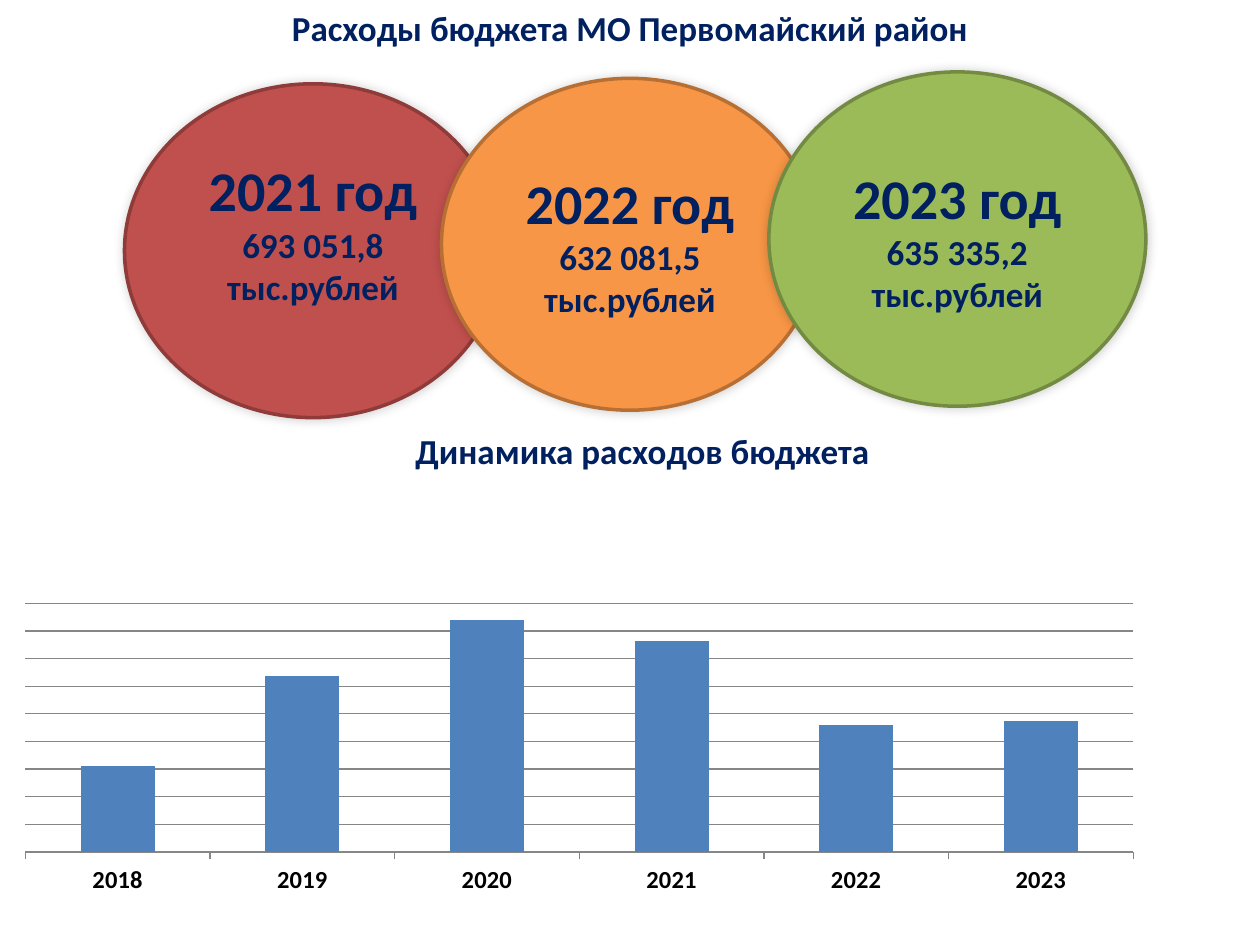
from lxml.etree import SubElement
from pptx import Presentation
from pptx.chart.data import CategoryChartData
from pptx.dml.color import RGBColor
from pptx.enum.chart import XL_CHART_TYPE, XL_TICK_LABEL_POSITION, XL_TICK_MARK
from pptx.enum.shapes import MSO_SHAPE
from pptx.enum.text import MSO_ANCHOR, MSO_AUTO_SIZE, PP_ALIGN
from pptx.oxml import parse_xml
from pptx.oxml.ns import nsdecls, qn
from pptx.util import Cm, Pt

NAVY = RGBColor(0x00, 0x20, 0x60)
BLACK = RGBColor(0x00, 0x00, 0x00)
GRAY = RGBColor(0x86, 0x86, 0x86)
BLUE = RGBColor(0x4F, 0x81, 0xBD)
RED, DARK_RED = RGBColor(0xC0, 0x50, 0x4D), RGBColor(0x8E, 0x3B, 0x39)
ORANGE, DARK_ORANGE = RGBColor(0xF7, 0x96, 0x46), RGBColor(0xB7, 0x6F, 0x34)
GREEN, DARK_GREEN = RGBColor(0x9B, 0xBB, 0x59), RGBColor(0x73, 0x8A, 0x42)
FONT = "Calibri"


def add_text(p, text, size=20, color=NAVY, bold=True, align=PP_ALIGN.CENTER):
    p.alignment = align
    r = p.add_run()
    r.text = text
    r.font.name = FONT
    r.font.size = Pt(size)
    r.font.bold = bold
    r.font.color.rgb = color


prs = Presentation()
prs.slide_width, prs.slide_height = Cm(25.4), Cm(19.05)
s = prs.slides.add_slide(prs.slide_layouts[5])

# Headings
title = s.shapes.title
title.left, title.top, title.width, title.height = Cm(0.5), Cm(0), Cm(24.4), Cm(1.11)
subtitle = s.shapes.add_textbox(Cm(0.5), Cm(8.53), Cm(24.9), Cm(1.11))
for sp, text in ((title, "Расходы бюджета МО Первомайский район"),
                 (subtitle, "Динамика расходов бюджета")):
    tf = sp.text_frame
    tf.word_wrap = True
    tf.auto_size = MSO_AUTO_SIZE.SHAPE_TO_FIT_TEXT
    tf.vertical_anchor = MSO_ANCHOR.TOP
    add_text(tf.paragraphs[0], text)

# Yearly totals: year, amount, left, top, height, bottom inset, fill, outline
ovals = (
    ("2021", "693 051,8", 2.51, 1.69, 6.73, 0.9, RED, DARK_RED),
    ("2022", "632 081,5", 8.9, 1.58, 6.69, 0.13, ORANGE, DARK_ORANGE),
    ("2023", "635 335,2", 15.5, 1.45, 6.74, 0.13, GREEN, DARK_GREEN),
)
for year, amount, left, top, height, inset, fill, outline in ovals:
    sp = s.shapes.add_shape(MSO_SHAPE.OVAL, Cm(left), Cm(top), Cm(7.6), Cm(height))
    sp.fill.solid()
    sp.fill.fore_color.rgb = fill
    sp.line.color.rgb = outline
    sp.line.width = Pt(2)
    sp.shadow.inherit = False
    effects = sp._element.spPr.find(qn("a:effectLst"))
    effects.append(parse_xml(
        f'<a:outerShdw {nsdecls("a")} blurRad="{Pt(6)}" dist="0" dir="13500000">'
        '<a:srgbClr val="000000"><a:alpha val="20000"/></a:srgbClr></a:outerShdw>'))
    tf = sp.text_frame
    tf.word_wrap = True
    tf.vertical_anchor = MSO_ANCHOR.MIDDLE
    tf.margin_bottom = Cm(inset)
    add_text(tf.paragraphs[0], f"{year} год", size=32)
    for text in (amount, "тыс.рублей"):
        add_text(tf.add_paragraph(), text)

# Spending by year, million roubles
data = CategoryChartData()
data.categories = ["2018", "2019", "2020", "2021", "2022", "2023"]
data.add_series("Расходы бюджета", (602, 667, 708, 693, 632, 635))
chart = s.shapes.add_chart(XL_CHART_TYPE.COLUMN_CLUSTERED, Cm(0.5), Cm(10.49),
                           Cm(23.77), Cm(7.6), data).chart
chart.has_title = False
chart.has_legend = False
chart.font.name = FONT
chart.font.size = Pt(10)
chart.font.color.rgb = BLACK

plot = chart.plots[0]
plot.gap_width = 150
plot.vary_by_categories = False
bars = plot.series[0].format.fill
bars.solid()
bars.fore_color.rgb = BLUE

years = chart.category_axis
years.major_tick_mark = XL_TICK_MARK.OUTSIDE
years.format.line.color.rgb = GRAY
years.tick_labels.font.name = FONT
years.tick_labels.font.size = Pt(14)
years.tick_labels.font.bold = True
years.tick_labels.font.color.rgb = BLACK

amounts = chart.value_axis
amounts.minimum_scale, amounts.maximum_scale = 540, 720
amounts.major_unit = 20
amounts.visible = False
amounts.tick_label_position = XL_TICK_LABEL_POSITION.NONE
amounts.has_major_gridlines = True
amounts.major_gridlines.format.line.color.rgb = GRAY

plot_area = chart._chartSpace.chart.plotArea
for old in plot_area.findall(qn("c:layout")):
    plot_area.remove(old)
layout = parse_xml(f'<c:layout {nsdecls("c")}><c:manualLayout/></c:layout>')
plot_area.insert(0, layout)
for tag, val in (("layoutTarget", "inner"), ("xMode", "edge"), ("yMode", "edge"),
                 ("x", "0"), ("y", "0.22"), ("w", "0.94"), ("h", "0.66")):
    SubElement(layout[0], qn(f"c:{tag}")).set("val", val)

prs.save("out.pptx")
